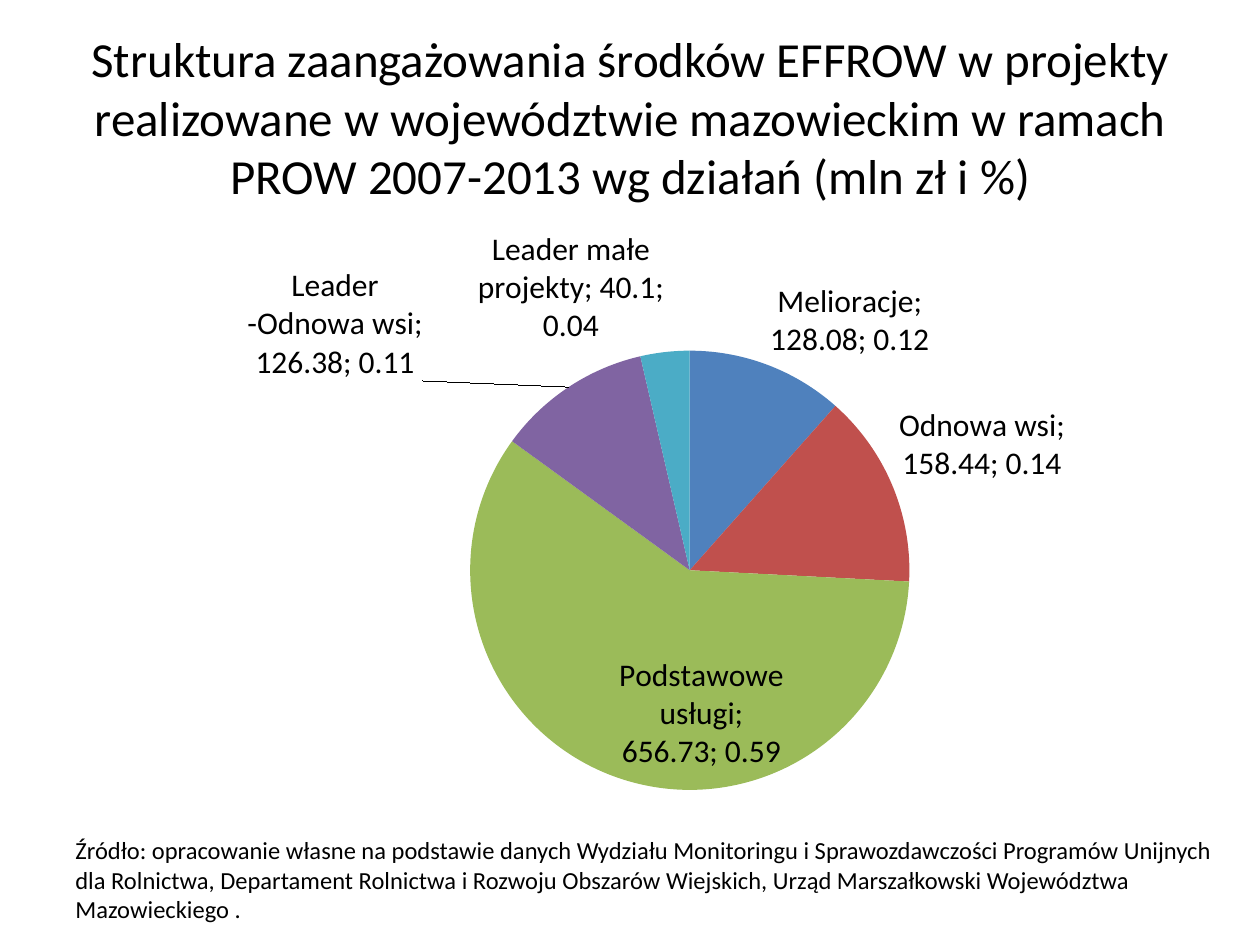
from lxml import etree
from pptx import Presentation
from pptx.chart.data import CategoryChartData
from pptx.dml.color import RGBColor
from pptx.enum.chart import XL_CHART_TYPE, XL_LABEL_POSITION
from pptx.enum.text import MSO_ANCHOR, MSO_AUTO_SIZE, PP_ALIGN
from pptx.oxml.ns import qn
from pptx.util import Pt

PX = 9144
FONT = "Calibri"
BLACK = RGBColor(0x00, 0x00, 0x00)
PIE = XL_CHART_TYPE.PIE
OUTSIDE = XL_LABEL_POSITION.OUTSIDE_END
INSIDE = XL_LABEL_POSITION.INSIDE_END
MIDDLE = MSO_ANCHOR.MIDDLE
CENTER, LEFT = PP_ALIGN.CENTER, PP_ALIGN.LEFT
GROW = MSO_AUTO_SIZE.SHAPE_TO_FIT_TEXT

HEADING = ("Struktura zaangażowania środków EFFROW w projekty realizowane "
           "w województwie mazowieckim w ramach PROW 2007-2013 wg działań (mln zł i %)")
SOURCE = ("Źródło: opracowanie własne na podstawie danych Wydziału Monitoringu "
          "i Sprawozdawczości Programów Unijnych dla Rolnictwa, Departament Rolnictwa "
          "i Rozwoju Obszarów Wiejskich, Urząd Marszałkowski Województwa Mazowieckiego .")
MEASURES = [
    ("Melioracje", 128.08, RGBColor(0x4F, 0x81, 0xBD)),
    ("Odnowa wsi", 158.44, RGBColor(0xC0, 0x50, 0x4D)),
    ("Podstawowe usługi", 656.73, RGBColor(0x9B, 0xBB, 0x59)),
    ("Leader -Odnowa wsi", 126.38, RGBColor(0x80, 0x64, 0xA2)),
    ("Leader małe projekty", 40.10, RGBColor(0x4B, 0xAC, 0xC6)),
]
BASIC_SERVICES, LEADER_RENEWAL = 2, 3
PLOT_AREA = {"layoutTarget": "inner", "xMode": "edge", "yMode": "edge",
             "x": 0.1, "y": 0.22, "w": 0.82, "h": 0.78}
LABEL_SHIFT = {"x": -0.14, "y": 0}
LABEL_FORMAT = {"show_category_name": True, "show_value": True,
                "show_percentage": True, "number_format": "0.00",
                "number_format_is_linked": False, "position": OUTSIDE}


def format_font(font, size):
    """Give a font its face, size and colour."""
    for name, value in {"name": FONT, "size": Pt(size)}.items():
        setattr(font, name, value)
    font.color.rgb = BLACK


def write_text(frame, text, size, align):
    """Write one formatted paragraph into a text frame."""
    frame.word_wrap = True
    paragraph = frame.paragraphs[0]
    paragraph.alignment = align
    run = paragraph.add_run()
    run.text = text
    format_font(run.font, size)


def set_layout(parent, values, position):
    """Place a chart part by a manual layout."""
    for old in parent.findall(qn("c:layout")):
        parent.remove(old)
    layout = etree.Element(qn("c:layout"))
    manual = etree.SubElement(layout, qn("c:manualLayout"))
    for name, value in values.items():
        etree.SubElement(manual, qn(f"c:{name}"), val=str(value))
    parent.insert(position, layout)


def format_labels(series):
    """Show category, value and share beside every slice."""
    labels = series.data_labels
    for name, value in LABEL_FORMAT.items():
        setattr(labels, name, value)
    format_font(labels.font, 18)
    for index, position in ((BASIC_SERVICES, INSIDE), (LEADER_RENEWAL, OUTSIDE)):
        label = series.points[index].data_label
        format_font(label.font, 18)
        label.position = position
    root = series._element
    for label in root.iter(qn("c:dLbl")):
        for flag in ("showVal", "showCatName", "showPercent"):
            label.find(qn(f"c:{flag}")).set("val", "1")
        if label.find(qn("c:idx")).get("val") == str(LEADER_RENEWAL):
            set_layout(label, LABEL_SHIFT, 1)
    for last_flag in list(root.iter(qn("c:showBubbleSize"))):
        separator = etree.Element(qn("c:separator"))
        separator.text = "; "
        last_flag.addnext(separator)


def add_heading(slide, left, top, width, height):
    """Fill the title placeholder."""
    title = slide.shapes.title
    box = {"left": left, "top": top, "width": width, "height": height}
    for name, value in box.items():
        setattr(title, name, value * PX)
    title.text_frame.vertical_anchor = MIDDLE
    write_text(title.text_frame, HEADING, 28, CENTER)


def add_funds_pie(slide, *box):
    """Draw the pie of funds by measure."""
    funds = CategoryChartData()
    funds.categories = [name for name, _, _ in MEASURES]
    funds.add_series("Series 1", [value for _, value, _ in MEASURES])
    chart = slide.shapes.add_chart(PIE, *(n * PX for n in box), funds).chart
    chart.has_legend = False
    chart.has_title = False
    format_font(chart.font, 10)
    plot = chart.plots[0]
    plot.vary_by_categories = True
    series = plot.series[0]
    for index, (_, _, color) in enumerate(MEASURES):
        fill = series.points[index].format.fill
        fill.solid()
        fill.fore_color.rgb = color
    format_labels(series)
    set_layout(chart._chartSpace.chart.plotArea, PLOT_AREA, 0)


def add_source(slide, *box):
    """Add the source note under the chart."""
    note = slide.shapes.add_textbox(*(n * PX for n in box))
    write_text(note.text_frame, SOURCE, 14, LEFT)
    note.text_frame.auto_size = GROW


def main():
    """Build the slide and save it."""
    deck = Presentation()
    deck.slide_width, deck.slide_height = 1000 * PX, 750 * PX
    slide = deck.slides.add_slide(deck.slide_layouts[5])
    add_heading(slide, 50, 30, 900, 125)
    add_funds_pie(slide, 138, 180, 803, 447)
    add_source(slide, 50, 658, 930, 81)
    deck.save("out.pptx")


if __name__ == "__main__":
    main()
